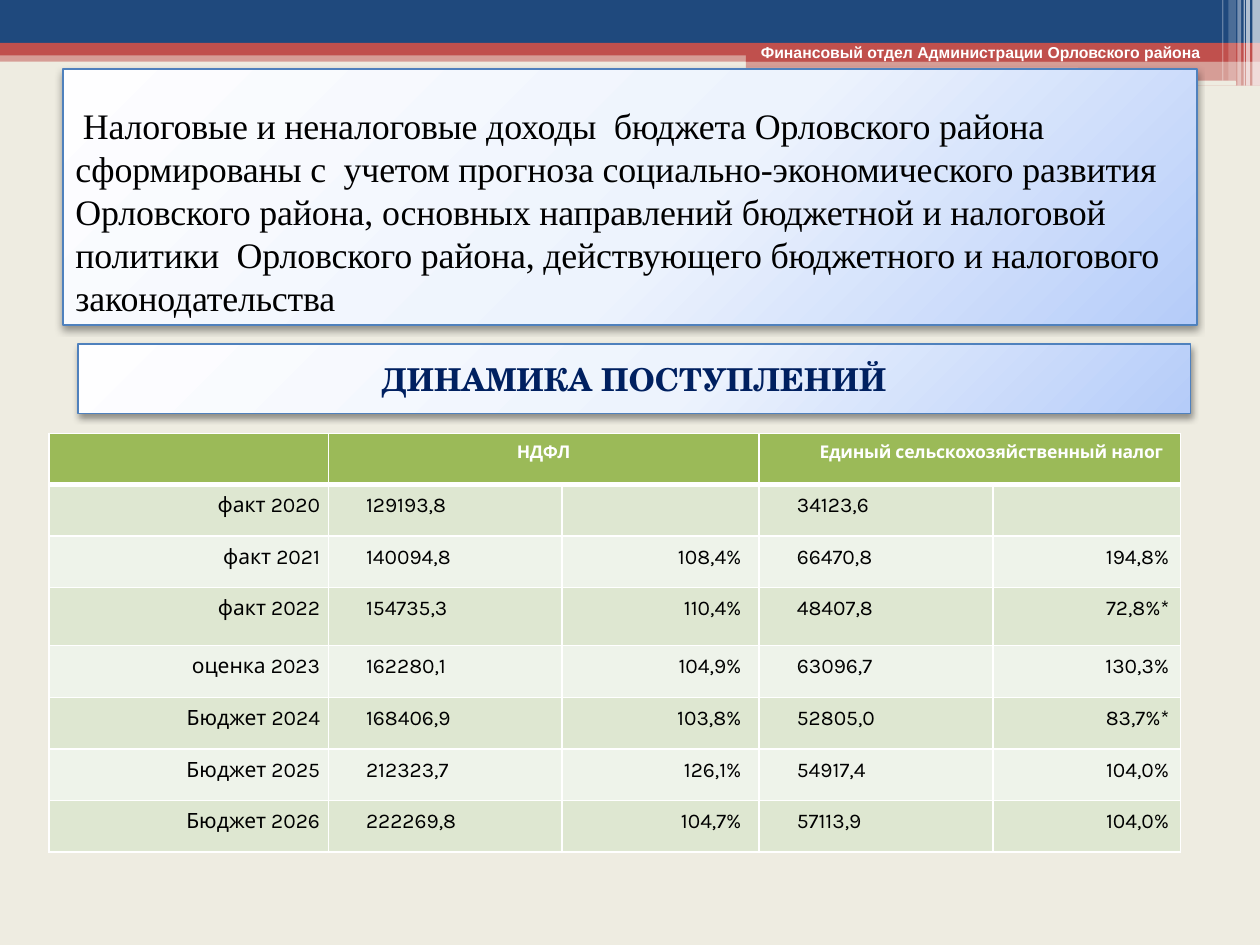
"""Build the slide on tax revenue dynamics of the Orlovsky district budget."""
from pptx import Presentation, util as u
from pptx.dml.color import RGBColor
from pptx.enum import shapes, text
from pptx.oxml import parse_xml
from pptx.oxml.ns import nsdecls, qn

prs = Presentation()
prs.slide_width, prs.slide_height = u.Inches(10), u.Inches(7.5)
COL, ROW = prs.slide_width / 100, prs.slide_height / 75
RECT, ROUND = shapes.MSO_SHAPE.RECTANGLE, shapes.MSO_SHAPE.ROUNDED_RECTANGLE
LEFT, CENTER, RIGHT = text.PP_ALIGN.LEFT, text.PP_ALIGN.CENTER, text.PP_ALIGN.RIGHT
TOP, MIDDLE, BOTTOM = text.MSO_ANCHOR.TOP, text.MSO_ANCHOR.MIDDLE, text.MSO_ANCHOR.BOTTOM
NAVY, RED, CREAM, WHITE, BLACK = "1F497D", "C0504D", "EEECE1", "FFFFFF", "000000"


def paint(fill, color, alpha=100):
    fill.solid()
    fill.fore_color.rgb = RGBColor.from_string(color)
    if alpha < 100:
        clr = fill._xPr.find(qn("a:solidFill"))[0]
        clr.append(parse_xml(f'<a:alpha {nsdecls("a")} val="{alpha * 1000}"/>'))


def write(tf, content, size, color, font="Karla", bold=False, align=LEFT, spacing=0):
    p = tf.paragraphs[0]
    p.alignment = align
    r = p.add_run()
    r.text = content
    r.font.name, r.font.size, r.font.bold = font, u.Pt(size), bold
    paint(r.font.fill, color)
    if spacing:
        r.font._element.set("spc", str(int(spacing * 100)))
    return p


s = prs.slides.add_slide(prs.slide_layouts[6])
paint(s.background.fill, CREAM)

bands = [
    (RECT, 0, 4, 100, 0.9, RED, 50),
    (RECT, 0, 0, 100, 3.4, NAVY, 100),
    (RECT, 0, 3.4, 100, 1, RED, 100),
    (RECT, 59.2, 3.9, 40.8, 1, RED, 100),
    (RECT, 59.2, 4.8, 40.8, 2, RED, 50),
    (ROUND, 59.1, 5.4, 33.5, 0.3, CREAM, 100),
    (ROUND, 80.6, 6.4, 17.5, 0.4, CREAM, 100),
]
stripes = [(99.4, 0.6, 6.8, 65), (98.9, 0.3, 6.8, 65), (98.7, 0.1, 6.8, 60),
           (98.2, 0.3, 6.8, 40), (97.5, 0.6, 6.4, 20), (97, 0.1, 6.4, 30)]
bands += [(RECT, x, 0, w, h, WHITE, alpha) for x, w, h, alpha in stripes]
for kind, x, y, w, h, color, alpha in bands:
    sp = s.shapes.add_shape(kind, int(x * COL), int(y * ROW), int(w * COL), int(h * ROW))
    sp.shadow.inherit = False
    sp.line.fill.background()
    paint(sp.fill, color, alpha)

sp = s.shapes.add_textbox(int(59.4 * COL), int(2.9 * ROW), int(39.1 * COL), int(2.5 * ROW))
sp.text_frame.word_wrap = True
write(sp.text_frame, "Финансовый отдел Администрации Орловского района", 9, WHITE,
      font="Arial", bold=True)

intro = ("Налоговые и неналоговые доходы  бюджета Орловского района сформированы "
         "с  учетом прогноза социально-экономического развития Орловского района, "
         "основных направлений бюджетной и налоговой политики  Орловского района, "
         "действующего бюджетного и налогового законодательства")
panels = [
    (5, 5.5, 90, 20.3, 1, BOTTOM, 0.6, intro,
     dict(size=20.5, color=BLACK, font="Times New Roman", spacing=-0.1)),
    (6.2, 27.3, 88.3, 5.5, 0.75, MIDDLE, 0, "ДИНАМИКА ПОСТУПЛЕНИЙ",
     dict(size=18, color="002060", font="TeX Gyre Schola", bold=True, align=CENTER)),
]
stops = "".join(f'<a:gs pos="{pos}000"><a:srgbClr val="{color}"/></a:gs>'
                for pos, color in [(0, "FEFEFF"), (55, "EDF3FD"), (100, "B5CCF9")])
for x, y, w, h, line, anchor, indent, content, style in panels:
    sp = s.shapes.add_shape(RECT, int(x * COL), int(y * ROW), int(w * COL), int(h * ROW))
    sp.shadow.inherit = False
    sp.fill.gradient()
    spPr = sp._element.spPr
    spPr.replace(spPr.find(qn("a:gradFill")), parse_xml(
        f'<a:gradFill {nsdecls("a")} rotWithShape="1"><a:gsLst>{stops}</a:gsLst>'
        '<a:path path="circle"><a:fillToRect l="-40000" t="-90000" r="140000" b="190000"/>'
        '</a:path></a:gradFill>'))
    spPr.find(qn("a:effectLst")).append(parse_xml(
        f'<a:outerShdw {nsdecls("a")} blurRad="52070" dist="25400" dir="5400000" rotWithShape="0">'
        '<a:srgbClr val="000000"><a:alpha val="40000"/></a:srgbClr></a:outerShdw>'))
    paint(sp.line.fill, "4F81BD")
    sp.line.width = u.Pt(line)
    tf = sp.text_frame
    tf.word_wrap, tf.vertical_anchor = True, anchor
    p = write(tf, content, **style)
    if indent:
        p._p.get_or_add_pPr().set("indent", str(int(indent * COL)))

rows = [
    ("", "НДФЛ", "", "Единый сельскохозяйственный налог", ""),
    ("факт 2020", "129193,8", "", "34123,6", ""),
    ("факт 2021", "140094,8", "108,4%", "66470,8", "194,8%"),
    ("факт 2022", "154735,3", "110,4%", "48407,8", "72,8%*"),
    ("оценка 2023", "162280,1", "104,9%", "63096,7", "130,3%"),
    ("Бюджет 2024", "168406,9", "103,8%", "52805,0", "83,7%*"),
    ("Бюджет 2025", "212323,7", "126,1%", "54917,4", "104,0%"),
    ("Бюджет 2026", "222269,8", "104,7%", "57113,9", "104,0%"),
]
widths = [22.15, 18.55, 15.65, 18.55, 14.9]
heights = [4.05, 4.1, 4.1, 4.6, 4.1, 4.1, 4.1, 4.1]
aligns = [RIGHT, LEFT, RIGHT, LEFT, RIGHT]
left_pads, right_pads = [0, 3, 0, 3, 0], [0.65, 0, 1.4, 0, 0.9]

table = s.shapes.add_table(len(rows), len(widths), int(3.9 * COL), int(34.4 * ROW),
                           int(sum(widths) * COL), int(sum(heights) * ROW)).table
table.first_row = table.horz_banding = False
for column, w in zip(table.columns, widths):
    column.width = int(w * COL)
for row, h in zip(table.rows, heights):
    row.height = int(h * ROW)
for c in (1, 3):
    table.cell(0, c).merge(table.cell(0, c + 1))

for i, row in enumerate(rows):
    for j, content in enumerate(row):
        cell = table.cell(i, j)
        tcPr = cell._tc.get_or_add_tcPr()
        for side in "LRTB":
            pt = 3 if (i, side) in ((0, "B"), (1, "T")) else 1
            ln = parse_xml(f'<a:ln{side} {nsdecls("a")} w="{u.Pt(pt)}"><a:solidFill>'
                           f'<a:srgbClr val="{WHITE}"/></a:solidFill></a:ln{side}>')
            tcPr.append(ln)
        paint(cell.fill, "9BBA58" if i == 0 else "DEE7D1" if i % 2 else "EEF3EA")
        cell.vertical_anchor = TOP
        cell.margin_top, cell.margin_bottom = int(0.7 * ROW), 0
        cell.margin_left, cell.margin_right = int(left_pads[j] * COL), int(right_pads[j] * COL)
        if i == 0:
            cell.margin_left = int((4.8 if j == 3 else 0) * COL)
        if content and i == 0:
            write(cell.text_frame, content, 10, WHITE, bold=True, spacing=-0.1,
                  align=CENTER if j == 1 else LEFT)
        elif content:
            write(cell.text_frame, content, 12, BLACK, align=aligns[j])

prs.save("out.pptx")
